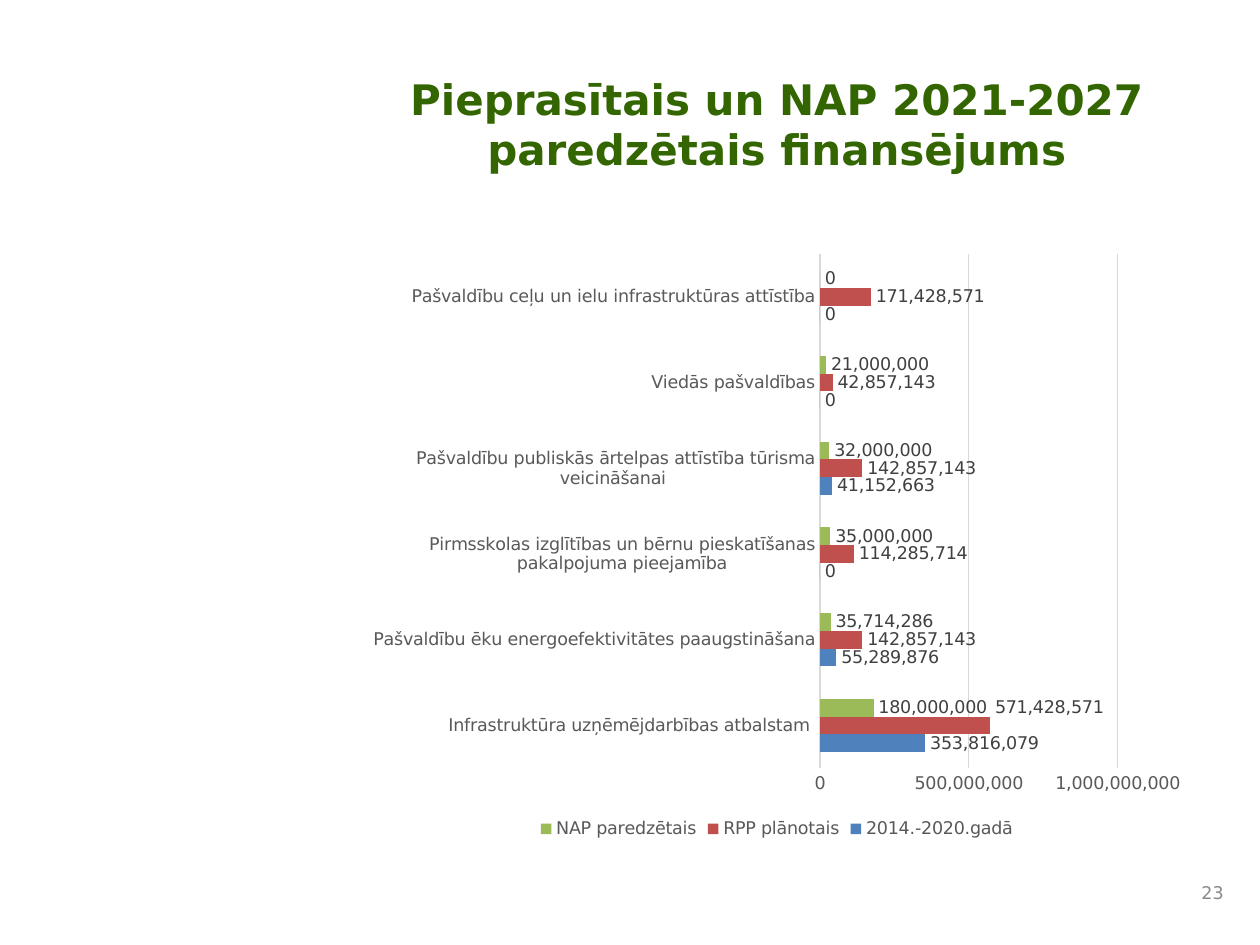
from dataclasses import dataclass

from lxml import etree
from pptx import Presentation
from pptx import util as u
from pptx.chart.data import CategoryChartData
from pptx.dml.color import RGBColor
from pptx.enum import chart as ch
from pptx.enum import text
from pptx.oxml.ns import qn

WIDE, HIGH = 10, 7.5
FORMAT = "#,##0"
TITLE = "Pieprasītais un NAP 2021-2027 paredzētais finansējums"
GROUPS = [
    "Infrastruktūra uzņēmējdarbības atbalstam ",
    "Pašvaldību ēku energoefektivitātes paaugstināšana",
    "Pirmsskolas izglītības un bērnu pieskatīšanas pakalpojuma pieejamība",
    "Pašvaldību publiskās ārtelpas attīstība tūrisma veicināšanai ",
    "Viedās pašvaldības",
    "Pašvaldību ceļu un ielu infrastruktūras attīstība",
]
SERIES = [
    ("2014.-2020.gadā", "4F81BD", [353816079, 55289876, 0, 41152663, 0, 0]),
    ("RPP plānotais", "C0504D",
     [571428571, 142857143, 114285714, 142857143, 42857143, 171428571]),
    ("NAP paredzētais", "9BBB59",
     [180000000, 35714286, 35000000, 32000000, 21000000, 0]),
]


@dataclass(frozen=True)
class Theme:
    """Colours and type sizes of the slide."""
    face: str = "DejaVu Sans"
    title: str = "336600"
    axis: str = "595959"
    label: str = "404040"
    grid: str = "D9D9D9"
    page: str = "898989"
    big: int = 24
    small: int = 10


THEME = Theme()


def place(x, y, w, h):
    """Turn shares of the slide into lengths."""
    return [u.Inches(n) for n in (x * WIDE, y * HIGH, w * WIDE, h * HIGH)]


def style(font, color, size=THEME.small, bold=False):
    """Apply face, size, weight and colour to a font."""
    form = {"name": THEME.face, "size": u.Pt(size), "bold": bold}
    for key, value in form.items():
        setattr(font, key, value)
    font.color.rgb = RGBColor.from_string(color)


def rule(line):
    """Draw a thin grey chart line."""
    line.color.rgb = RGBColor.from_string(THEME.grid)
    line.width = u.Pt(0.75)


def write(shape, words, align, anchor, *look):
    """Fill a shape with one formatted paragraph."""
    frame = shape.text_frame
    form = {"text": words, "word_wrap": True, "vertical_anchor": anchor,
            "auto_size": text.MSO_AUTO_SIZE.NONE}
    for key, value in form.items():
        setattr(frame, key, value)
    para = frame.paragraphs[0]
    para.alignment = align
    style(para.runs[0].font, *look)


def add_head(slide):
    """Move and fill the title placeholder."""
    head = slide.shapes.title
    box = place(0.283, 0.056, 0.667, 0.15)
    for key, value in zip(("left", "top", "width", "height"), box):
        setattr(head, key, value)
    write(head, TITLE, text.PP_ALIGN.CENTER, text.MSO_ANCHOR.MIDDLE,
          THEME.title, THEME.big, True)


def lift(series, spot, share):
    """Shift the label of one point by a share of the chart height."""
    label = series.points[spot].data_label
    style(label.font, THEME.label)
    label.position = ch.XL_LABEL_POSITION.OUTSIDE_END
    node = series.points[spot].data_label._dLbl
    layout = etree.Element(qn("c:layout"))
    manual = etree.SubElement(layout, qn("c:manualLayout"))
    for tag, value in (("c:x", 0), ("c:y", share)):
        etree.SubElement(manual, qn(tag)).set("val", str(value))
    node.insert(1, layout)


def format_axes(chart):
    """Format both axes and the grid lines."""
    for axis in (chart.category_axis, chart.value_axis):
        axis.major_tick_mark = axis.minor_tick_mark = ch.XL_TICK_MARK.NONE
        style(axis.tick_labels.font, THEME.axis)
    rule(chart.category_axis.format.line)
    value = chart.value_axis
    value.format.line.fill.background()
    value.has_major_gridlines = True
    rule(value.major_gridlines.format.line)
    value.tick_labels.number_format = FORMAT
    value.tick_labels.number_format_is_linked = False


def format_bars(plot):
    """Colour the bars and label their values."""
    plot.gap_width = 182
    plot.overlap = 0
    plot.vary_by_categories = False
    for bars, (_, color, _) in zip(plot.series, SERIES):
        bars.format.fill.solid()
        bars.format.fill.fore_color.rgb = RGBColor.from_string(color)
        labels = bars.data_labels
        form = {"show_value": True, "number_format": FORMAT,
                "number_format_is_linked": False,
                "position": ch.XL_LABEL_POSITION.OUTSIDE_END}
        for key, value in form.items():
            setattr(labels, key, value)
        style(labels.font, THEME.label)


def add_bars(slide):
    """Add the bar chart of funding by group."""
    data = CategoryChartData(number_format=FORMAT)
    data.categories = GROUPS
    for name, _, values in SERIES:
        data.add_series(name, values)
    chart = slide.shapes.add_chart(
        ch.XL_CHART_TYPE.BAR_CLUSTERED,
        *place(0.283, 0.256, 0.667, 0.637), data).chart
    style(chart.font, "000000")
    chart.has_title = False
    chart.has_legend = True
    chart.legend.position = ch.XL_LEGEND_POSITION.BOTTOM
    chart.legend.include_in_layout = False
    style(chart.legend.font, THEME.axis)
    format_axes(chart)
    format_bars(chart.plots[0])
    lift(chart.plots[0].series[1], 0, -0.03)


def add_page(slide):
    """Add the page number."""
    box = slide.shapes.add_textbox(*place(0.933, 0.923, 0.048, 0.044))
    write(box, "23", text.PP_ALIGN.RIGHT, text.MSO_ANCHOR.MIDDLE, THEME.page)


def main():
    """Build and save the slide."""
    deck = Presentation()
    deck.slide_width, deck.slide_height = u.Inches(WIDE), u.Inches(HIGH)
    slide = deck.slides.add_slide(deck.slide_layouts[5])
    add_head(slide)
    add_bars(slide)
    add_page(slide)
    deck.save("out.pptx")


if __name__ == "__main__":
    main()
